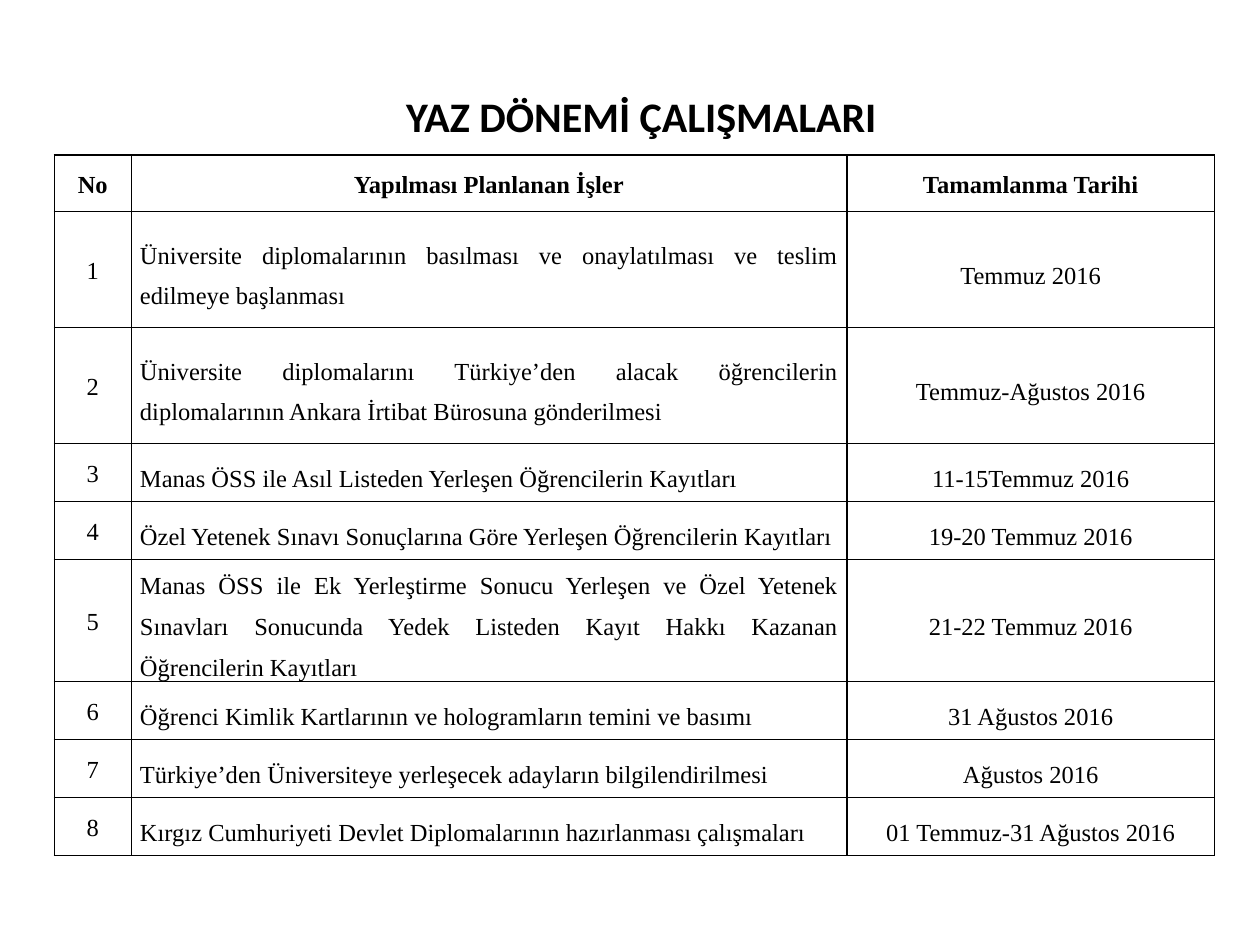
from lxml import etree
from pptx import Presentation
from pptx import util as u
from pptx.dml.color import RGBColor
from pptx.enum import text
from pptx.oxml.ns import qn

CENTER, JUSTIFY = text.PP_ALIGN.CENTER, text.PP_ALIGN.JUSTIFY

HEADERS = ["No", "Yapılması Planlanan İşler", "Tamamlanma Tarihi"]
# Task, completion date, row height
TASKS = [
    ("Üniversite diplomalarının basılması ve onaylatılması ve teslim edilmeye başlanması",
     "Temmuz 2016", 66.3),
    ("Üniversite diplomalarını Türkiye’den alacak öğrencilerin diplomalarının "
     "Ankara İrtibat Bürosuna gönderilmesi", "Temmuz-Ağustos 2016", 66.3),
    ("Manas ÖSS ile Asıl Listeden Yerleşen Öğrencilerin Kayıtları",
     "11-15Temmuz 2016", 33.15),
    ("Özel Yetenek Sınavı Sonuçlarına Göre Yerleşen Öğrencilerin Kayıtları",
     "19-20 Temmuz 2016", 33.15),
    ("Manas ÖSS ile Ek Yerleştirme Sonucu Yerleşen ve Özel Yetenek Sınavları "
     "Sonucunda Yedek Listeden Kayıt Hakkı Kazanan Öğrencilerin Kayıtları",
     "21-22 Temmuz 2016", 66.3),
    ("Öğrenci Kimlik Kartlarının ve hologramların temini ve basımı",
     "31 Ağustos 2016", 33.15),
    ("Türkiye’den Üniversiteye yerleşecek adayların bilgilendirilmesi",
     "Ağustos 2016", 33.15),
    ("Kırgız Cumhuriyeti Devlet Diplomalarının hazırlanması çalışmaları",
     "01 Temmuz-31 Ağustos 2016", 33.15),
]


def rgb(value):
    return RGBColor.from_string(value)


def apply(obj, values):
    for name, value in values.items():
        setattr(obj, name, value)


class Deck:
    ink, paper = "000000", "FFFFFF"
    title_font = dict(name="Calibri", size=u.Pt(24), bold=True)
    body_font = dict(name="Times New Roman", size=u.Pt(14), bold=False)
    cell_box = dict(margin_left=u.Pt(5), margin_right=u.Pt(5), margin_top=0,
                    margin_bottom=0, vertical_anchor=text.MSO_ANCHOR.MIDDLE)

    def __init__(self, width, height):
        self.prs = Presentation()
        apply(self.prs, dict(slide_width=u.Pt(width), slide_height=u.Pt(height)))

    def add_slide(self):
        self.s = self.prs.slides.add_slide(self.prs.slide_layouts[5])

    def add_text(self, tf, content, font, **paragraph):
        p = tf.paragraphs[0]
        apply(p, paragraph)
        r = p.add_run()
        r.text = content
        apply(r.font, font)
        r.font.color.rgb = rgb(self.ink)

    def title(self, content, left, top, width, height):
        sp = self.s.shapes.title
        apply(sp, dict(left=u.Pt(left), top=u.Pt(top),
                       width=u.Pt(width), height=u.Pt(height)))
        sp.fill.solid()
        sp.fill.fore_color.rgb = rgb(self.paper)
        sp.text_frame.vertical_anchor = text.MSO_ANCHOR.MIDDLE
        self.add_text(sp.text_frame, content, self.title_font, alignment=CENTER)

    def table(self, left, top, widths, heights):
        tbl = self.s.shapes.add_table(
            len(heights), len(widths), u.Pt(left), u.Pt(top),
            u.Pt(sum(widths)), u.Pt(sum(heights))).table
        apply(tbl, dict(first_row=False, horz_banding=False))
        for col, width in zip(tbl.columns, widths):
            col.width = u.Pt(width)
        for row, height in zip(tbl.rows, heights):
            row.height = u.Pt(height)
        return tbl

    def cell(self, cell, content, bold=False, **paragraph):
        apply(cell, self.cell_box)
        self.borders(cell)
        cell.fill.background()
        self.add_text(cell.text_frame, content, {**self.body_font, "bold": bold},
                      **paragraph)

    def borders(self, cell):
        tc_pr = cell._tc.get_or_add_tcPr()
        for side in ("lnL", "lnR", "lnT", "lnB"):
            ln = etree.SubElement(tc_pr, qn(f"a:{side}"), w=str(u.Pt(1)))
            fill = etree.SubElement(ln, qn("a:solidFill"))
            etree.SubElement(fill, qn("a:srgbClr"), val=self.ink)


def main():
    deck = Deck(720, 540)
    deck.add_slide()

    # Title
    deck.title("YAZ DÖNEMİ ÇALIŞMALARI", 42.5, 21, 648, 90)

    # Work plan
    tbl = deck.table(31, 88.5, [44, 409, 210],
                     [32.4] + [height for _, _, height in TASKS])
    for col, header in enumerate(HEADERS):
        deck.cell(tbl.cell(0, col), header, bold=True,
                  alignment=CENTER, line_spacing=1.15)
    for row, (task, date, _) in enumerate(TASKS, 1):
        deck.cell(tbl.cell(row, 0), str(row), alignment=CENTER, line_spacing=1.15)
        deck.cell(tbl.cell(row, 1), task, alignment=JUSTIFY, line_spacing=1.5)
        deck.cell(tbl.cell(row, 2), date, alignment=CENTER, line_spacing=1.5)

    deck.prs.save("out.pptx")


if __name__ == "__main__":
    main()
